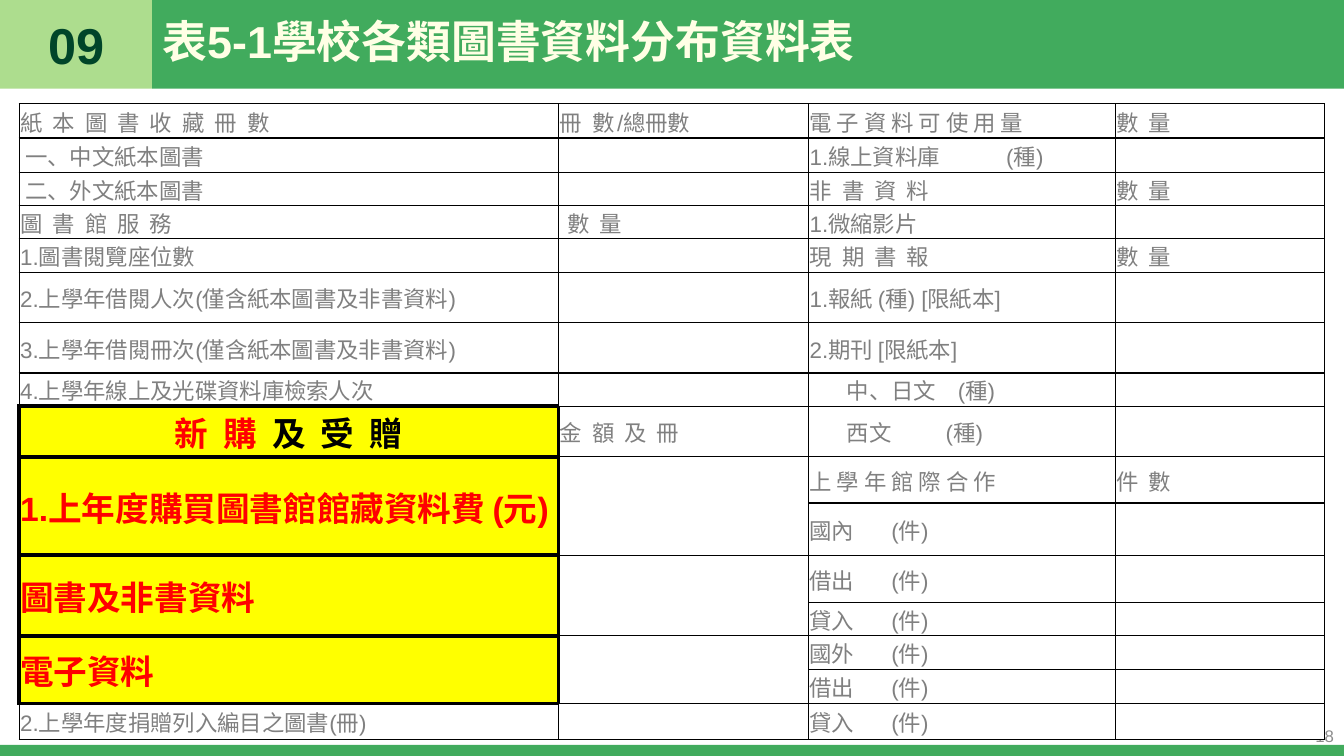
from dataclasses import dataclass

from lxml import etree
from pptx import Presentation
from pptx import util as u
from pptx.dml.color import RGBColor
from pptx.enum import shapes, text
from pptx.oxml import ns

COLORS = {
    "green": "41AB5D", "light": "ADDD8E", "dark": "004529", "cream": "FFFFE5",
    "gray": "808080", "page": "8C8C8C", "red": "FF0000", "yellow": "FFFF00",
    "black": "000000", "white": "FFFFFF",
}
FONT = "Arial"


@dataclass
class Run:
    text: str
    color: str = "gray"
    size: int = 16
    bold: bool = False
    spread: bool = False  # wide letter spacing for headings


@dataclass
class Bar:
    left: float
    top: float
    width: float
    height: float
    color: str


def rgb(name: str) -> RGBColor:
    return RGBColor.from_string(COLORS[name])


def head(words: str) -> Run:
    return Run(words, spread=True)


def hot(words: str, color: str = "red", spread: bool = False) -> Run:
    return Run(words, color, 24, True, spread)


def add_run(p, run: Run) -> None:
    r = p.add_run()
    r.text = run.text
    r.font.name = FONT
    r.font.size = u.Pt(run.size)
    r.font.bold = run.bold
    r.font.color.rgb = rgb(run.color)
    if run.spread:
        r.font._element.set("spc", str(round(run.size * 11.5)))


def add_bar(s, bar: Bar) -> None:
    sp = s.shapes.add_shape(shapes.MSO_SHAPE.RECTANGLE, u.Inches(bar.left), u.Inches(bar.top),
                            u.Inches(bar.width), u.Inches(bar.height))
    sp.shadow.inherit = False
    sp.fill.solid()
    sp.fill.fore_color.rgb = rgb(bar.color)
    sp.line.fill.background()


def fill_text(sp, run: Run, left: float, top: float, width: float, height: float, align):
    sp.left, sp.top = u.Inches(left), u.Inches(top)
    sp.width, sp.height = u.Inches(width), u.Inches(height)
    tf = sp.text_frame
    tf.word_wrap = True
    tf.auto_size = text.MSO_AUTO_SIZE.NONE
    tf.vertical_anchor = text.MSO_ANCHOR.MIDDLE
    p = tf.paragraphs[0]
    p.alignment = align
    add_run(p, run)
    return p


def add_borders(cell, widths: dict[str, int]) -> None:
    tc_pr = cell._tc.get_or_add_tcPr()
    for i, (side, width) in enumerate(widths.items()):
        ln = etree.Element(ns.qn(f"a:ln{side}"), w=str(u.Pt(width)))
        fill = etree.SubElement(ln, ns.qn("a:solidFill"))
        etree.SubElement(fill, ns.qn("a:srgbClr"), val=COLORS["black"])
        tc_pr.insert(i, ln)


def add_tabs(p, stops: list[float]) -> None:
    tabs = etree.SubElement(p._p.get_or_add_pPr(), ns.qn("a:tabLst"))
    for stop in stops:
        etree.SubElement(tabs, ns.qn("a:tab"), pos=str(u.Inches(stop)), algn="l")


# Table content: each cell is a list of runs, rows without a cell are skipped
COLUMNS = [5.35, 2.48, 3.04, 2.08]
ROWS = [0.34, 0.34, 0.33, 0.33, 0.33, 0.5, 0.5, 0.33,
        0.5, 0.46, 0.51, 0.47, 0.33, 0.33, 0.34, 0.36]
HOT_ROWS = range(8, 15)
MERGED_ROWS = (9, 11, 13)
CELLS: list[dict[int, list[Run]]] = [
    {
        0: [head("紙 本 圖 書 收 藏 冊 數")],
        1: [Run(" 一、中文紙本圖書")],
        2: [Run(" 二、外文紙本圖書")],
        3: [head("圖 書 館 服 務")],
        4: [Run("1.圖書閱覽座位數")],
        5: [Run("2.上學年借閱人次(僅含紙本圖書及非書資料)")],
        6: [Run("3.上學年借閱冊次(僅含紙本圖書及非書資料)")],
        7: [Run("4.上學年線上及光碟資料庫檢索人次")],
        8: [hot("新 購 ", spread=True), hot("及 受 贈", "black", True)],
        9: [hot("1.上年度購買圖書館館藏資料費 (元)")],
        11: [hot("圖書及非書資料")],
        13: [hot("電子資料")],
        15: [Run("2.上學年度捐贈列入編目之圖書(冊)")],
    },
    {
        0: [head("冊 數"), Run("/總冊數")],
        3: [head(" 數 量")],
        8: [head("金 額 及 冊")],
    },
    {
        0: [Run("電 子 資 料 可 使 用 量")],
        1: [Run("1.線上資料庫\t(種)")],
        2: [head("非 書 資 料")],
        3: [Run("1.微縮影片")],
        4: [head("現 期 書 報")],
        5: [Run("1.報紙 (種) [限紙本]")],
        6: [Run("2.期刊 [限紙本]")],
        7: [Run("\t中、日文\t(種)")],
        8: [Run("\t西文\t(種)")],
        9: [Run("上 學 年 館 際 合 作")],
        **{row: [Run(f"{kind}\t(件)")]
           for row, kind in enumerate(("國內", "借出", "貸入", "國外", "借出", "貸入"), 10)},
    },
    {**{row: [head("數 量")] for row in (0, 2, 4)}, 9: [head("件 數")]},
]
TABS = {1: [1.95], 7: [0.37, 1.47], 8: [0.37, 1.35]}


def edge_widths(row: int, col: int) -> dict[str, int]:
    def is_hot(r: int, c: int) -> bool:
        return c == 0 and r in HOT_ROWS

    near = {"L": (row, col - 1), "R": (row, col + 1), "T": (row - 1, col), "B": (row + 1, col)}
    return {side: 3 if is_hot(row, col) or is_hot(*cell) else 1 for side, cell in near.items()}


def add_library_table(s) -> None:
    frame = s.shapes.add_table(len(ROWS), len(COLUMNS), u.Inches(0.19), u.Inches(1.03),
                               u.Inches(sum(COLUMNS)), u.Inches(sum(ROWS)))
    table = frame.table
    table.first_row = table.horz_banding = False
    for row, height in enumerate(ROWS):
        table.rows[row].height = u.Inches(height)
    for col, width in enumerate(COLUMNS):
        table.columns[col].width = u.Inches(width)
        for row in range(len(ROWS)):
            cell = table.cell(row, col)
            cell.margin_left = cell.margin_right = cell.margin_top = u.Inches(0.01)
            cell.margin_bottom = 0
            cell.vertical_anchor = text.MSO_ANCHOR.MIDDLE
            cell.fill.solid()
            is_hot = col == 0 and row in HOT_ROWS
            cell.fill.fore_color.rgb = rgb("yellow" if is_hot else "white")
            add_borders(cell, edge_widths(row, col))
            p = cell.text_frame.paragraphs[0]
            for run in CELLS[col].get(row, []):
                add_run(p, run)
                if "\t" in run.text:
                    add_tabs(p, TABS.get(row, [0.81]))
    table.cell(8, 0).text_frame.paragraphs[0].alignment = text.PP_ALIGN.CENTER
    for row in MERGED_ROWS:
        for col in (0, 1):
            table.cell(row, col).merge(table.cell(row + 1, col))


def main() -> None:
    prs = Presentation()
    prs.slide_width, prs.slide_height = u.Inches(13.33), u.Inches(7.5)
    s = prs.slides.add_slide(prs.slide_layouts[1])
    title, number = s.placeholders

    # Header and footer bars
    for bar in (Bar(0, 7.39, 13.33, 0.11, "green"), Bar(0, 0, 1.51, 0.88, "light"),
                Bar(1.51, 0, 11.82, 0.88, "green")):
        add_bar(s, bar)

    # Page number
    page = s.shapes.add_textbox(0, 0, 0, 0)
    fill_text(page, Run("18", "page", 12), 10.33, 7.1, 3, 0.4, text.PP_ALIGN.RIGHT)

    # Title and section number, in front of the bars
    for sp in (title, number):
        sp.element.getparent().append(sp.element)
    p = fill_text(title, Run("表5-1學校各類圖書資料分布資料表", "cream", 32, True),
                  1.51, 0, 11.62, 0.88, text.PP_ALIGN.LEFT)
    p.line_spacing = 0.9
    p = fill_text(number, Run("09", "dark", 36, True), 0, 0, 1.51, 0.88, text.PP_ALIGN.CENTER)
    p.space_before = u.Pt(10)
    p_pr = p._p.get_or_add_pPr()
    p_pr.set("marL", "0")
    p_pr.set("indent", "0")
    etree.SubElement(p_pr, ns.qn("a:buNone"))

    add_library_table(s)
    prs.save("out.pptx")


if __name__ == "__main__":
    main()
